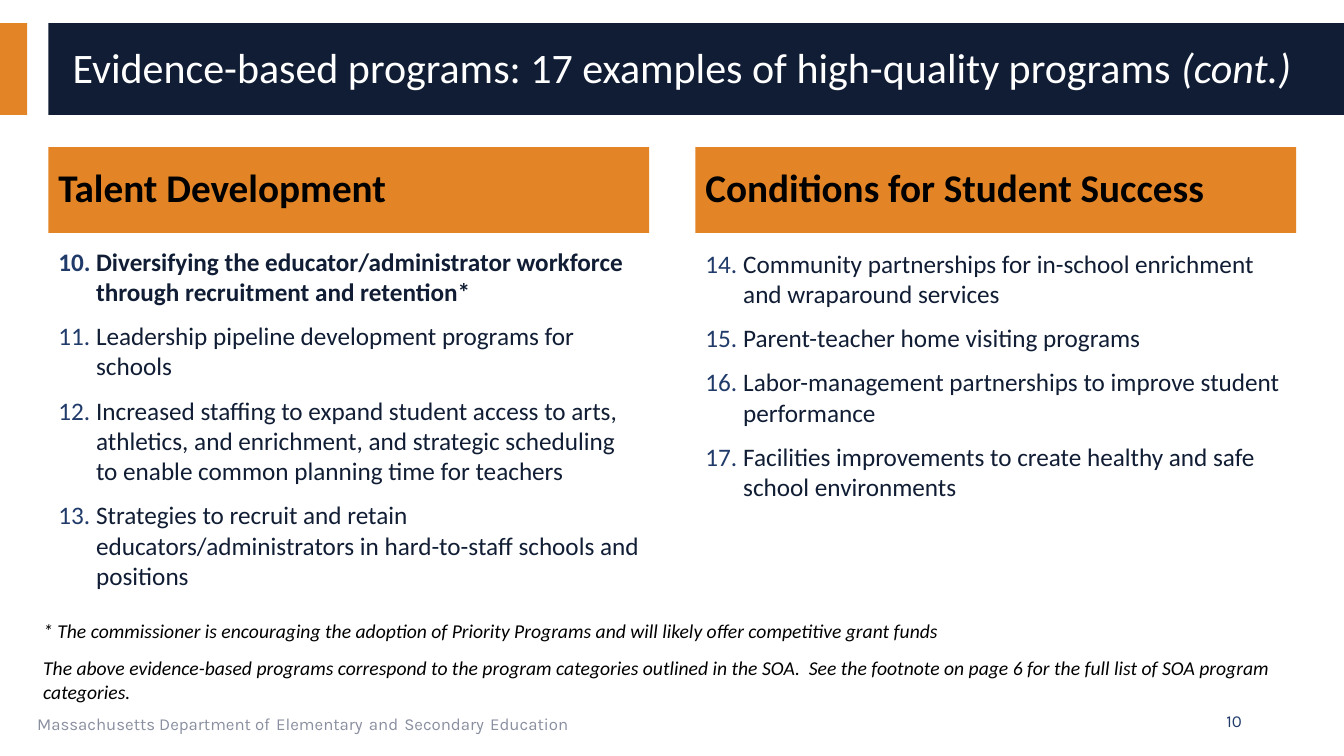
from lxml.etree import SubElement
from pptx import Presentation
from pptx.dml.color import RGBColor
from pptx.enum.shapes import MSO_SHAPE
from pptx.enum.text import MSO_ANCHOR, MSO_AUTO_SIZE, PP_ALIGN
from pptx.oxml.ns import qn
from pptx.util import Pt

NAVY = RGBColor(0x10, 0x1D, 0x34)
BLUE = RGBColor(0x20, 0x3B, 0x6A)
ORANGE = RGBColor(0xE3, 0x85, 0x26)
GRAY = RGBColor(0x8A, 0x8F, 0xA0)
WHITE = RGBColor(0xFF, 0xFF, 0xFF)
BLACK = RGBColor(0, 0, 0)

SLIDE_W, SLIDE_H = 960, 540
LEFT = 34.56
BAR_TOP, BAR_H = 16.56, 65.52
COLUMN_W, COLUMN_STEP = 429.12, 462.24
HEADER_TOP, HEADER_H = 105.12, 61.2
LIST_H = 298.8
INDENT = 27
FOOTER_TOP, FOOTER_H = 500.4, 28.8

COLUMNS = [
    ("Talent Development", 172.08, 10, [
        "Diversifying the educator/administrator workforce through recruitment and retention*",
        "Leadership pipeline development programs for schools",
        "Increased staffing to expand student access to arts, athletics, and enrichment, "
        "and strategic scheduling to enable common planning time for teachers",
        "Strategies to recruit and retain educators/administrators in hard-to-staff schools "
        "and positions",
    ]),
    ("Conditions for Student Success", 173.52, 14, [
        "Community partnerships for in-school enrichment and wraparound services",
        "Parent-teacher home visiting programs",
        "Labor-management partnerships to improve student performance",
        "Facilities improvements to create healthy and safe school environments",
    ]),
]
PRIORITY_PROGRAMS = {10}
NOTES = [
    "* The commissioner is encouraging the adoption of Priority Programs and will likely "
    "offer competitive grant funds",
    "The above evidence-based programs correspond to the program categories outlined in "
    "the SOA.  See the footnote on page 6 for the full list of SOA program categories.",
]
DEPARTMENT = ["Massachusetts Department of", "Elementary", "and", "Secondary", "Education"]


def add_run(p, text, size=18, color=NAVY, bold=False, italic=False, font="Calibri"):
    r = p.add_run()
    r.text = text
    r.font.name = font
    r.font.size = Pt(size)
    r.font.bold = bold
    r.font.italic = italic
    r.font.color.rgb = color


def number_paragraph(p, start):
    pPr = p._p.get_or_add_pPr()
    pPr.set("marL", str(Pt(INDENT)))
    pPr.set("indent", str(-Pt(INDENT)))
    color = SubElement(pPr, qn("a:buClr"))
    SubElement(color, qn("a:srgbClr"), val=str(BLUE))
    SubElement(pPr, qn("a:buAutoNum"), type="arabicPeriod", startAt=str(start))


class SlideBuilder:
    def __init__(self, prs):
        self.slide = prs.slides.add_slide(prs.slide_layouts[5])

    def frame(self, sp, anchor=MSO_ANCHOR.TOP, inset=3.6):
        tf = sp.text_frame
        tf.word_wrap = True
        tf.auto_size = MSO_AUTO_SIZE.NONE
        tf.vertical_anchor = anchor
        tf.margin_left = tf.margin_right = Pt(7.2)
        tf.margin_top = tf.margin_bottom = Pt(inset)
        return tf

    def block(self, x, y, w, h, color):
        sp = self.slide.shapes.add_shape(MSO_SHAPE.RECTANGLE, Pt(x), Pt(y), Pt(w), Pt(h))
        sp.shadow.inherit = False
        sp.fill.solid()
        sp.fill.fore_color.rgb = color
        sp.line.fill.background()
        return sp

    def text_box(self, x, y, w, h, **frame):
        sp = self.slide.shapes.add_textbox(Pt(x), Pt(y), Pt(w), Pt(h))
        return self.frame(sp, **frame)

    def title(self, x, y, w, h, text, suffix):
        sp = self.slide.shapes.title
        sp.left, sp.top, sp.width, sp.height = Pt(x), Pt(y), Pt(w), Pt(h)
        sp.element.getparent().append(sp.element)  # bring in front of the bar
        p = self.frame(sp, MSO_ANCHOR.MIDDLE).paragraphs[0]
        p.alignment = PP_ALIGN.LEFT
        p.line_spacing = 0.9
        add_run(p, text, size=30, color=WHITE)
        add_run(p, suffix, size=30, color=WHITE, italic=True)

    def header(self, x, text):
        sp = self.block(x, HEADER_TOP, COLUMN_W, HEADER_H, ORANGE)
        p = self.frame(sp, MSO_ANCHOR.MIDDLE).paragraphs[0]
        p.alignment = PP_ALIGN.LEFT
        p.line_spacing = 0.9
        add_run(p, text, size=28, color=BLACK, bold=True)

    def paragraphs(self, tf, count, gap):
        for i in range(count):
            p = tf.add_paragraph() if i else tf.paragraphs[0]
            if i:
                p.space_before = Pt(gap)
            yield p

    def numbered_list(self, x, y, start, items):
        tf = self.text_box(x, y, COLUMN_W, LIST_H)
        for i, p in enumerate(self.paragraphs(tf, len(items), 10)):
            number_paragraph(p, start)
            add_run(p, items[i], bold=start + i in PRIORITY_PROGRAMS)

    def notes(self, x, y, w, h, lines):
        tf = self.text_box(x, y, w, h, inset=7.2)
        for p, line in zip(self.paragraphs(tf, len(lines), 9.75), lines):
            add_run(p, line, size=14, color=BLACK, italic=True)

    def department(self, x, w, parts):
        p = self.text_box(x, FOOTER_TOP, w, FOOTER_H).paragraphs[0]
        for i, part in enumerate(parts):
            if i:
                add_run(p, " ", color=BLUE, font="Karla")
            add_run(p, part, size=12, color=GRAY, font="Karla")

    def page_number(self, x, w, text):
        tf = self.text_box(x, FOOTER_TOP, w, FOOTER_H, anchor=MSO_ANCHOR.MIDDLE)
        p = tf.paragraphs[0]
        p.alignment = PP_ALIGN.RIGHT
        add_run(p, text, size=12, color=BLUE, font="Karla")


def main():
    prs = Presentation()
    prs.slide_width, prs.slide_height = Pt(SLIDE_W), Pt(SLIDE_H)
    s = SlideBuilder(prs)

    s.block(0, BAR_TOP, 19.44, BAR_H, ORANGE)
    s.block(LEFT, BAR_TOP, SLIDE_W - LEFT, BAR_H, NAVY)
    s.department(19.44, 607.68, DEPARTMENT)
    s.title(44.64, 23.04, 900, 53.28,
            "Evidence-based programs: 17 examples of high-quality programs ", "(cont.)")
    for i, (heading, list_top, start, items) in enumerate(COLUMNS):
        x = LEFT + i * COLUMN_STEP
        s.header(x, heading)
        s.numbered_list(x, list_top, start, items)
    s.notes(23.76, 434.88, 912.24, 75.6, NOTES)
    s.page_number(678.24, 216, "10")

    prs.save("out.pptx")


if __name__ == "__main__":
    main()
